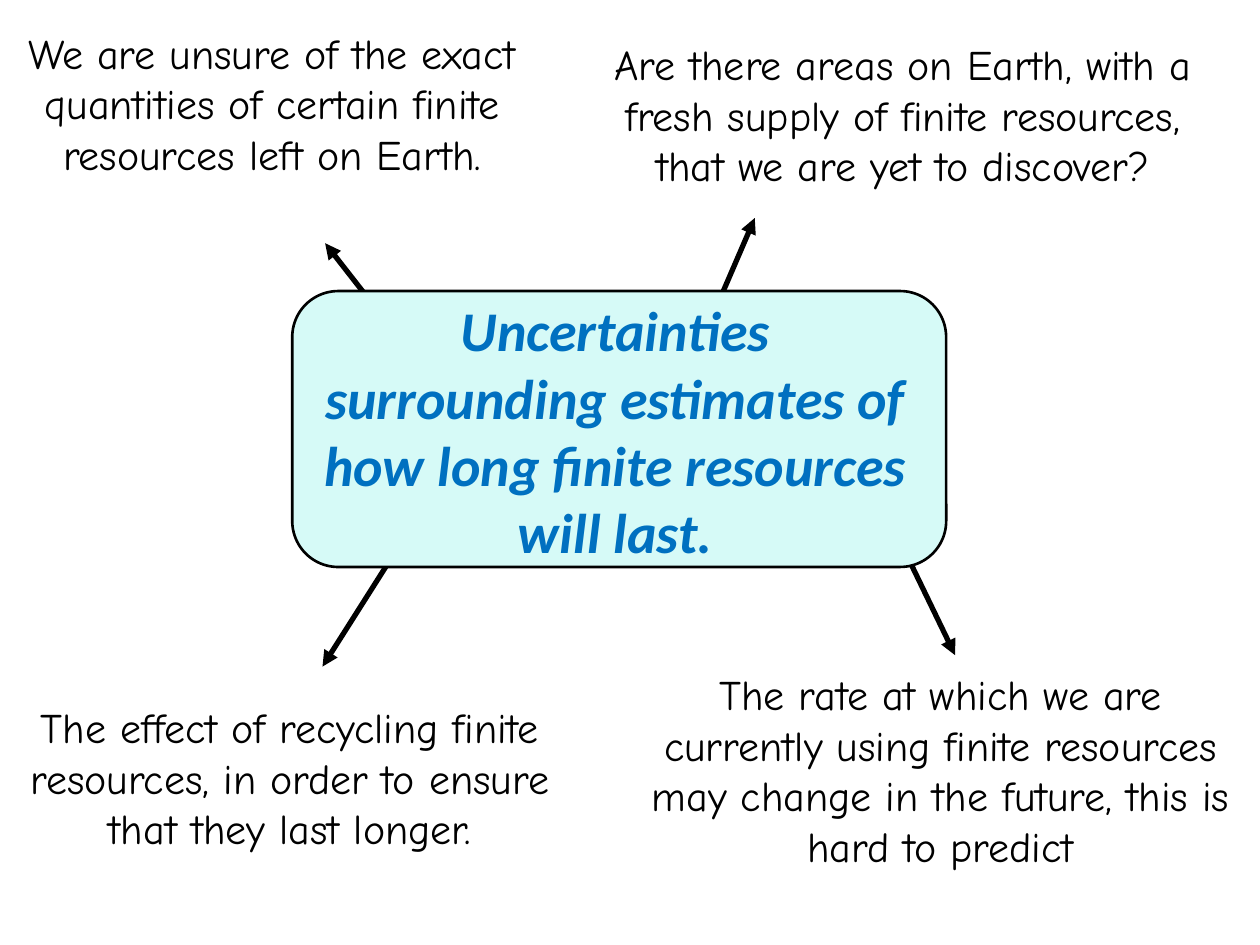
from pptx import Presentation
from pptx.util import Pt
from pptx.dml.color import RGBColor
from pptx.enum.shapes import MSO_CONNECTOR, MSO_SHAPE
from pptx.enum.text import PP_ALIGN
from lxml.etree import SubElement
from pptx.oxml.ns import qn

BLACK = RGBColor(0x00, 0x00, 0x00)
BLUE = RGBColor(0x00, 0x70, 0xC0)
AQUA = RGBColor(0xD6, 0xFA, 0xF7)

prs = Presentation()
prs.slide_width = Pt(720)
prs.slide_height = Pt(540)
s = prs.slides.add_slide(prs.slide_layouts[6])


def add_text(box, text, font, size, color, emphasis=False):
    sp = s.shapes.add_textbox(*[Pt(v) for v in box])
    tf = sp.text_frame
    tf.word_wrap = True
    p = tf.paragraphs[0]
    p.alignment = PP_ALIGN.CENTER
    r = p.add_run()
    r.text = text
    r.font.name = font
    r.font.size = Pt(size)
    r.font.color.rgb = color
    r.font.bold = emphasis
    r.font.italic = emphasis


arrows = [
    (218.9, 181.4, 185.8, 139),
    (231.8, 306, 184.3, 380.9),
    (516.2, 313.2, 545.8, 374.4),
    (411.8, 169.9, 431.3, 124.6),
]
for ends in arrows:
    cx = s.shapes.add_connector(MSO_CONNECTOR.STRAIGHT, *[Pt(v) for v in ends])
    cx.line.color.rgb = BLACK
    cx.line.width = Pt(3)
    SubElement(cx.line._get_or_add_ln(), qn("a:tailEnd"), type="triangle")
    SubElement(cx._element.spPr, qn("a:effectLst"))

sp = s.shapes.add_shape(MSO_SHAPE.ROUNDED_RECTANGLE, Pt(167), Pt(166.3), Pt(373.7), Pt(157.7))
sp.shadow.inherit = False
sp.fill.solid()
sp.fill.fore_color.rgb = AQUA
sp.line.color.rgb = BLACK
sp.line.width = Pt(1.5)

add_text((174.2, 165.6, 355, 162.7),
         "Uncertainties surrounding estimates of how long finite resources will last.",
         "Calibri", 32, BLUE, True)

notes = [
    ((0, 12.2, 311, 123.8),
     "We are unsure of the exact quantities of certain finite resources left on Earth."),
    ((365, 378.7, 344.9, 152.6),
     "The rate at which we are currently using finite resources may change in the future, this is hard to predict"),
    ((339.8, 18.7, 352.1, 123.8),
     "Are there areas on Earth, with a fresh supply of finite resources, that we are yet to discover?"),
    ((10.1, 397.4, 311, 123.8),
     "The effect of recycling finite resources, in order to ensure that they last longer."),
]
for box, text in notes:
    add_text(box, text, "Comic Neue", 24, BLACK)

prs.save("out.pptx")
